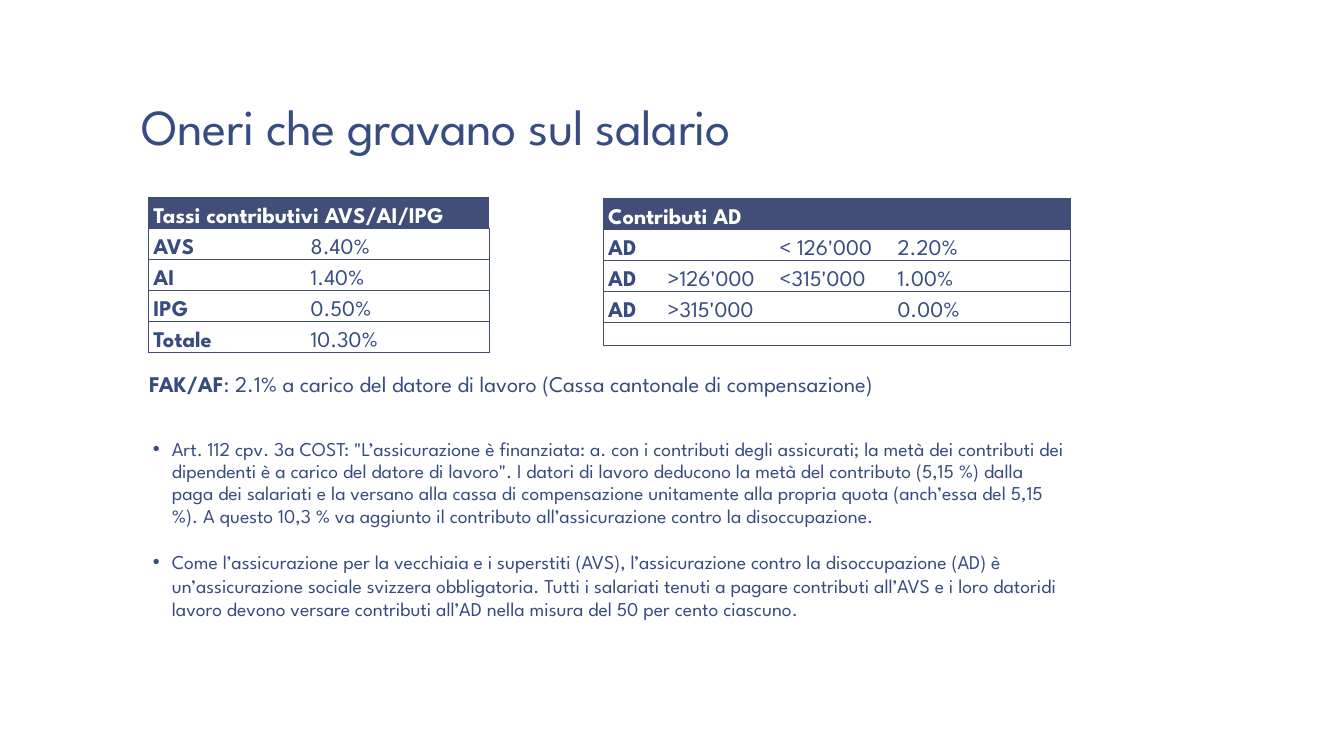
from lxml.etree import SubElement
from pptx import Presentation
from pptx.dml.color import RGBColor
from pptx.enum.text import MSO_ANCHOR, PP_ALIGN
from pptx.oxml.ns import qn
from pptx.util import Pt

NAVY = RGBColor(0x37, 0x4C, 0x81)
SLATE = RGBColor(0x41, 0x4E, 0x77)
WHITE = RGBColor(0xFF, 0xFF, 0xFF)
FONT = "League Spartan"

HEADING = "Oneri che gravano sul salario"
RATES = [
    {"left": 106, "top": 141.2, "columns": [112.3, 131], "rows": [
        ["Tassi contributivi AVS/AI/IPG", ""],
        ["AVS", "8.40%"],
        ["AI", "1.40%"],
        ["IPG", "0.50%"],
        ["Totale", "10.30%"],
    ]},
    {"left": 430.8, "top": 141.7, "columns": [42.5, 80, 84.2, 127.4], "rows": [
        ["Contributi AD", "", "", ""],
        ["AD", "", "< 126'000", "2.20%"],
        ["AD", ">126'000", "<315'000", "1.00%"],
        ["AD", ">315'000", "", "0.00%"],
        ["", "", "", ""],
    ]},
]
FAMILY = [("FAK/AF", True),
          (": 2.1% a carico del datore di lavoro (Cassa cantonale di compensazione)", False)]
NOTES = [
    ("Art. 112 cpv. 3a COST: \"L’assicurazione è finanziata: a. con i contributi degli "
     "assicurati; la metà dei contributi dei dipendenti è a carico del datore di lavoro\". "
     "I datori di lavoro deducono la metà del contributo (5,15 %) dalla paga dei salariati "
     "e la versano alla cassa di compensazione unitamente alla propria quota (anch’essa del "
     "5,15 %). A questo 10,3 % va aggiunto il contributo all’assicurazione contro la "
     "disoccupazione.", 0.95, 0),
    ("Come l’assicurazione per la vecchiaia e i superstiti (AVS), l’assicurazione contro la "
     "disoccupazione (AD) è un’assicurazione sociale svizzera obbligatoria. Tutti i salariati "
     "tenuti a pagare contributi all’AVS e i loro datoridi lavoro devono versare contributi "
     "all’AD nella misura del 50 per cento ciascuno.", 1.0, 16),
]
ROW_HEIGHT = 16.9


def set_values(target, values):
    for name, value in values.items():
        setattr(target, name, value)


def write(paragraph, text, size, color=NAVY, bold=False):
    run = paragraph.add_run()
    run.text = text
    set_values(run.font, {"name": FONT, "size": Pt(size), "bold": bold})
    run.font.color.rgb = color
    return run


def add_frame(slide, left, top, width, height, anchor=MSO_ANCHOR.TOP):
    frame = slide.shapes.add_textbox(Pt(left), Pt(top), Pt(width), Pt(height)).text_frame
    set_values(frame, {"word_wrap": True, "vertical_anchor": anchor})
    return frame


def add_border(cell, side, visible):
    line = SubElement(cell._tc.get_or_add_tcPr(), qn(f"a:{side}"), w=str(Pt(0.5)))
    if visible:
        fill = SubElement(line, qn("a:solidFill"))
        SubElement(fill, qn("a:srgbClr"), val=str(SLATE))
    else:
        SubElement(line, qn("a:noFill"))


def add_rates(slide, rates):
    rows, columns = rates["rows"], rates["columns"]
    table = slide.shapes.add_table(
        len(rows), len(columns), Pt(rates["left"]), Pt(rates["top"]),
        Pt(sum(columns)), Pt(ROW_HEIGHT * len(rows))).table
    for column, width in zip(table.columns, columns):
        column.width = Pt(width)
    for r, row in enumerate(rows):
        table.rows[r].height = Pt(ROW_HEIGHT)
        for c, text in enumerate(row):
            cell = table.cell(r, c)
            set_values(cell, {"margin_left": Pt(3.6), "margin_right": Pt(3.6),
                              "margin_top": 0, "margin_bottom": 0,
                              "vertical_anchor": MSO_ANCHOR.BOTTOM})
            paragraph = cell.text_frame.paragraphs[0]
            set_values(paragraph, {"alignment": PP_ALIGN.JUSTIFY, "line_spacing": 1.15})
            if text:
                write(paragraph, text, 16, WHITE if r == 0 else NAVY, r == 0 or c == 0)
            else:
                SubElement(paragraph._p, qn("a:endParaRPr"), sz="1000")
            edges = {"lnL": c == 0, "lnR": c == len(row) - 1, "lnT": True, "lnB": True}
            for side, visible in edges.items():
                add_border(cell, side, visible)
            if r == 0:
                cell.fill.solid()
                cell.fill.fore_color.rgb = SLATE
            else:
                cell.fill.background()
    table.cell(0, 0).merge(table.cell(0, 1))


def add_notes(slide):
    frame = add_frame(slide, 102.2, 309.6, 666.7, 203.8)
    for i, (text, spacing, before) in enumerate(NOTES):
        paragraph = frame.paragraphs[0] if i == 0 else frame.add_paragraph()
        paragraph.line_spacing = spacing
        if before:
            paragraph.space_before = Pt(before)
        properties = paragraph._p.get_or_add_pPr()
        properties.set("marL", str(Pt(13.5)))
        properties.set("indent", str(-Pt(13.5)))
        SubElement(properties, qn("a:buFont"), typeface="Arial")
        SubElement(properties, qn("a:buChar"), char="•")
        write(paragraph, text, 14)


def main():
    deck = Presentation()
    set_values(deck, {"slide_width": Pt(960), "slide_height": Pt(540)})
    slide = deck.slides.add_slide(deck.slide_layouts[6])

    heading = add_frame(slide, 94.3, 25.9, 859.7, 88.6, MSO_ANCHOR.BOTTOM).paragraphs[0]
    heading.line_spacing = 0.85
    run = write(heading, HEADING, 36)
    run.font._element.set("spc", "-30")

    for rates in RATES:
        add_rates(slide, rates)

    add_notes(slide)

    family = add_frame(slide, 99.4, 262.1, 645, 25.9).paragraphs[0]
    family.line_spacing = 0.95
    for text, bold in FAMILY:
        write(family, text, 16, bold=bold)

    deck.save("out.pptx")


if __name__ == "__main__":
    main()
